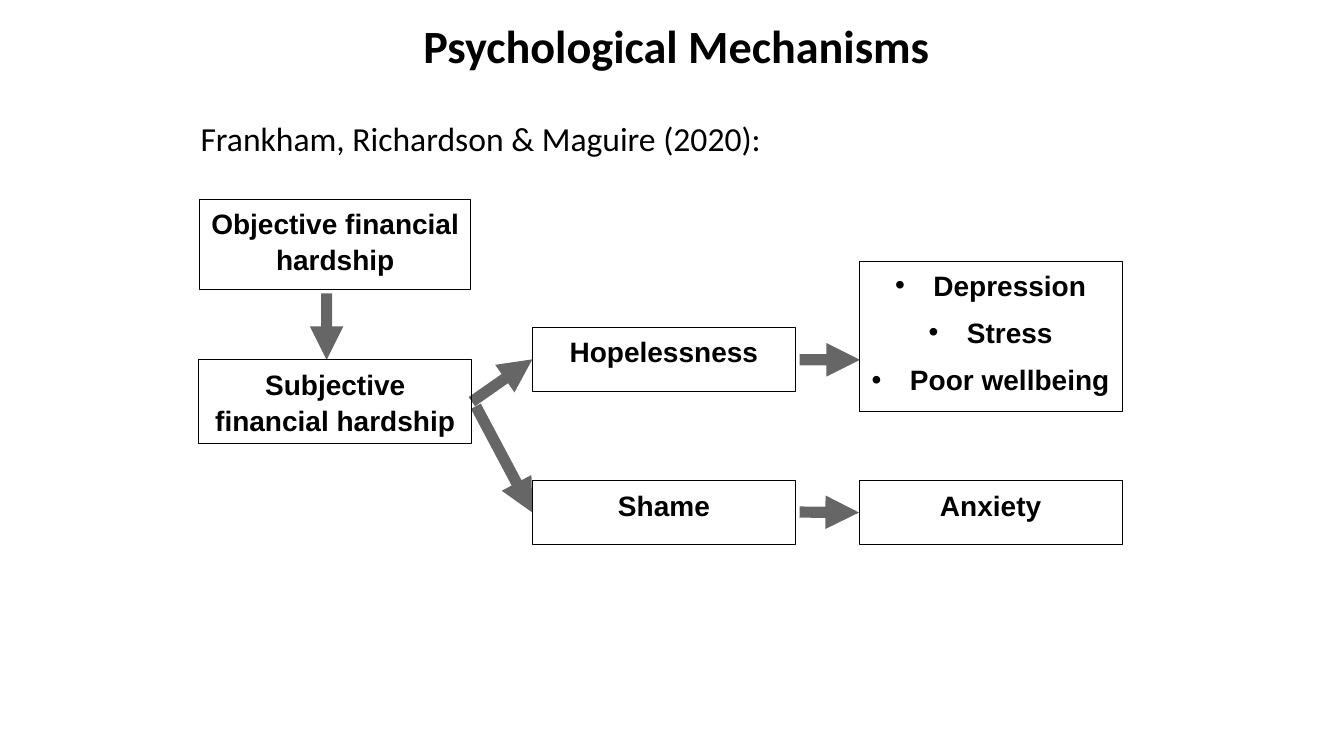
from dataclasses import dataclass

from lxml import etree
from pptx import Presentation
from pptx.dml.color import RGBColor
from pptx.enum import shapes, text
from pptx.oxml import ns
from pptx.util import Inches, Pt


@dataclass(frozen=True)
class Theme:
    ink: RGBColor = RGBColor(0, 0, 0)
    paper: RGBColor = RGBColor(255, 255, 255)
    head: str = "Calibri"
    body: str = "Arial"
    title: int = 33
    cite: int = 24
    label: int = 20
    edge: float = 0.5
    arrow: int = 8
    alpha: int = 60


THEME = Theme()
MID = text.PP_ALIGN.CENTER


def style(para, face, size, bold, align, gap):
    para.alignment = align
    para.line_spacing = gap
    for run in para.runs:
        run.font.name = face
        run.font.size = Pt(size)
        run.font.bold = bold
        run.font.color.rgb = THEME.ink


def indent(para, left, first=0):
    props = para._p.get_or_add_pPr()
    props.set("marL", str(Inches(left)))
    props.set("indent", str(Inches(first)))
    return props


def add_title(slide, words):
    title = slide.shapes.title
    title.left, title.top = Inches(2.18), Inches(0.08)
    title.width, title.height = Inches(9.06), Inches(0.81)
    frame = title.text_frame
    frame.text = words
    frame.auto_size = text.MSO_AUTO_SIZE.NONE
    frame.vertical_anchor = text.MSO_ANCHOR.MIDDLE
    style(frame.paragraphs[0], THEME.head, THEME.title, True, MID, 0.9)


def add_cite(slide, words):
    box = slide.shapes.add_textbox(
        Inches(1.77), Inches(1.17), Inches(9.38), Inches(0.46))
    frame = box.text_frame
    frame.text = words
    frame.word_wrap = True
    frame.auto_size = text.MSO_AUTO_SIZE.SHAPE_TO_FIT_TEXT
    para = frame.paragraphs[0]
    style(para, THEME.head, THEME.cite, False, text.PP_ALIGN.JUSTIFY, 0.9)
    indent(para, 0.12)


def add_box(slide, words, left, top, width=2.61, height=0.63):
    box = slide.shapes.add_shape(
        shapes.MSO_SHAPE.RECTANGLE,
        Inches(left), Inches(top), Inches(width), Inches(height))
    box.shadow.inherit = False
    box.fill.solid()
    box.fill.fore_color.rgb = THEME.paper
    box.line.color.rgb = THEME.ink
    box.line.width = Pt(THEME.edge)
    frame = box.text_frame
    frame.text = words
    frame.word_wrap = True
    frame.vertical_anchor = text.MSO_ANCHOR.TOP
    for para in frame.paragraphs:
        style(para, THEME.body, THEME.label, True, MID, 1.07)
        para.space_after = Pt(8)
    return box


def add_dots(box):
    for para in box.text_frame.paragraphs:
        props = indent(para, 0.38, -0.38)
        etree.SubElement(props, ns.qn("a:buFont"), typeface=THEME.body)
        etree.SubElement(props, ns.qn("a:buChar"), char="•")


def add_arrow(slide, start, end, source=None, target=None):
    line = slide.shapes.add_connector(
        shapes.MSO_CONNECTOR.STRAIGHT, *map(Inches, start + end))
    line.line.width = Pt(THEME.arrow)
    line.line.color.rgb = THEME.ink
    props = line._element.spPr
    color = props.find(".//" + ns.qn("a:srgbClr"))
    etree.SubElement(color, ns.qn("a:alpha"), val=str(THEME.alpha * 1000))
    stroke = props.find(ns.qn("a:ln"))
    etree.SubElement(stroke, ns.qn("a:tailEnd"), type="triangle")
    etree.SubElement(props, ns.qn("a:effectLst"))
    if source:
        line.begin_connect(source, 3)
    if target:
        line.end_connect(target, 1)


def main():
    deck = Presentation()
    deck.slide_width, deck.slide_height = Inches(13.33), Inches(7.5)
    slide = deck.slides.add_slide(deck.slide_layouts[5])
    add_title(slide, "Psychological Mechanisms")
    add_cite(slide, "Frankham, Richardson & Maguire (2020):")

    felt = add_box(slide, "Subjective financial hardship", 1.97, 3.57, 2.71, 0.83)
    add_box(slide, "Objective financial hardship", 1.98, 1.98, 2.69, 0.89)
    hopeless = add_box(slide, "Hopelessness", 5.28, 3.25)
    shame = add_box(slide, "Shame", 5.28, 4.77)
    moods = add_box(
        slide, "Depression\nStress\nPoor wellbeing", 8.52, 2.59, height=1.49)
    add_dots(moods)
    fear = add_box(slide, "Anxiety", 8.52, 4.77)

    add_arrow(slide, (3.24, 2.91), (3.24, 3.57))
    add_arrow(slide, (4.68, 3.95), (5.28, 3.57), felt, hopeless)
    add_arrow(slide, (4.72, 4.03), (5.28, 5.08), target=shame)
    add_arrow(slide, (7.93, 3.57), (8.53, 3.57))
    add_arrow(slide, (7.93, 5.08), (8.53, 5.08), target=fear)
    deck.save("out.pptx")


if __name__ == "__main__":
    main()
